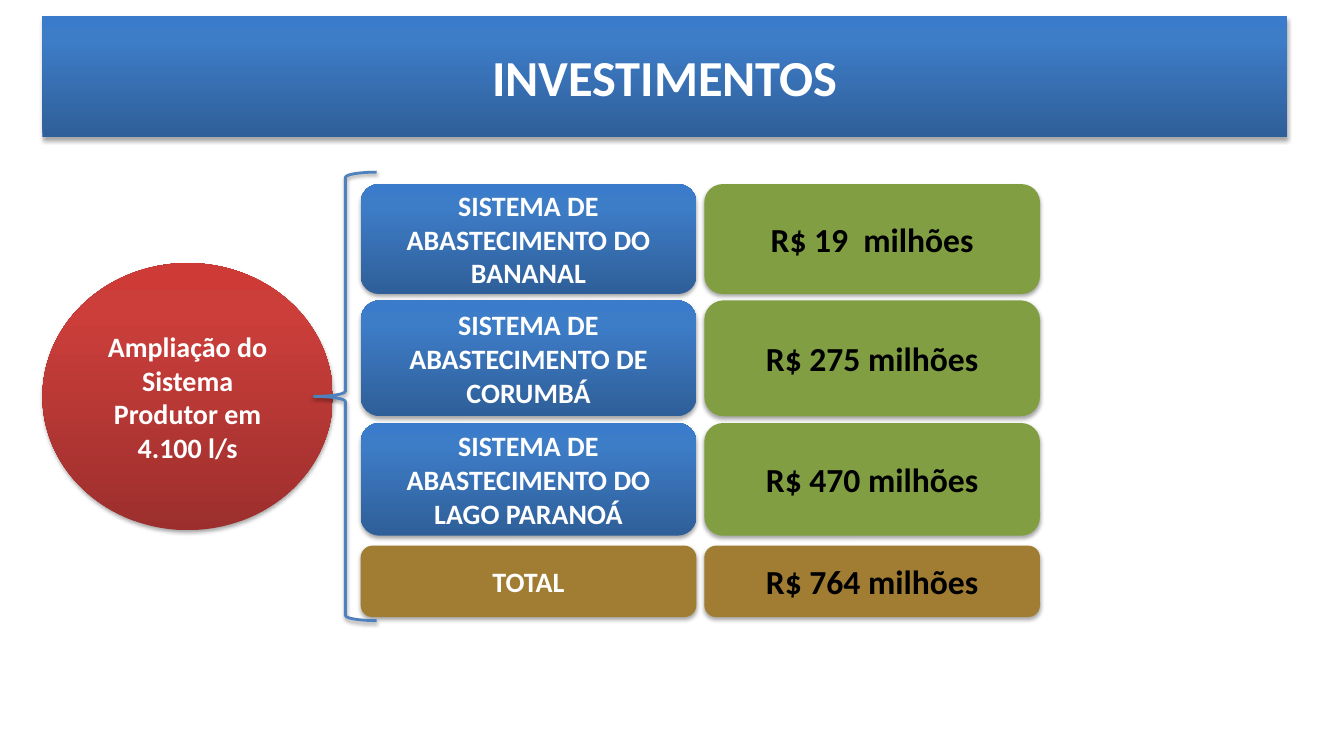
from copy import deepcopy
from lxml import etree
from pptx import Presentation
from pptx.dml.color import RGBColor
from pptx.enum.shapes import MSO_SHAPE
from pptx.enum.text import MSO_ANCHOR, MSO_AUTO_SIZE, PP_ALIGN
from pptx.oxml import parse_xml
from pptx.oxml.ns import qn
from pptx.util import Cm, Pt

ROUND = MSO_SHAPE.ROUNDED_RECTANGLE
OVAL = MSO_SHAPE.OVAL
BRACE = MSO_SHAPE.LEFT_BRACE
MIDDLE = MSO_ANCHOR.MIDDLE
FIXED = MSO_AUTO_SIZE.NONE
CENTER = PP_ALIGN.CENTER

WHITE = RGBColor(0xFF, 0xFF, 0xFF)
BLACK = RGBColor(0x00, 0x00, 0x00)
GREEN = RGBColor(0x81, 0x9E, 0x43)
GOLD = RGBColor(0xA0, 0x7D, 0x32)
LINE = RGBColor(0x4F, 0x81, 0xBD)
BLUES = [RGBColor(0x2F, 0x5F, 0x99), RGBColor(0x3D, 0x7C, 0xC7), RGBColor(0x3A, 0x7C, 0xCB)]
REDS = [RGBColor(0x9C, 0x2F, 0x2D), RGBColor(0xCB, 0x3E, 0x3A), RGBColor(0xCE, 0x3B, 0x37)]
SPACE = "http://schemas.openxmlformats.org/drawingml/2006/main"


def shade(shape, alpha, dist):
    shape.shadow.inherit = False
    glow = etree.SubElement(
        shape._element.spPr.find(qn("a:effectLst")), qn("a:outerShdw"),
        blurRad=str(Pt(3.1)), dist=str(Pt(dist)), dir="5400000", rotWithShape="0")
    ink = etree.SubElement(glow, qn("a:srgbClr"), val="000000")
    etree.SubElement(ink, qn("a:alpha"), val=str(alpha * 1000))


def dress(shape, text, size, color, paint):
    fill = shape.fill
    if isinstance(paint, list):
        fill.gradient()
        fill.gradient_angle = 90
        stops = shape._element.spPr.find(qn("a:gradFill")).find(qn("a:gsLst"))
        stops.append(deepcopy(stops[-1]))
        for stop, tint, place in zip(fill.gradient_stops, paint, (0, 0.8, 1)):
            stop.color.rgb = tint
            stop.position = place
    else:
        fill.solid()
        fill.fore_color.rgb = paint
    shape.line.fill.background()
    shade(shape, 35, 1.8)
    frame = shape.text_frame
    frame.text = text
    frame.word_wrap = True
    frame.auto_size = FIXED
    frame.vertical_anchor = MIDDLE
    par = frame.paragraphs[0]
    par.alignment = CENTER
    font = par.runs[0].font
    font.name = "Calibri"
    font.size = Pt(size)
    font.bold = True
    font.color.rgb = color


deck = Presentation()
deck.slide_width = Cm(33.87)
deck.slide_height = Cm(19.05)
slide = deck.slides.add_slide(deck.slide_layouts[5])
shapes = slide.shapes

title = shapes.title
title.left, title.top, title.width, title.height = Cm(1.07), Cm(0.41), Cm(31.37), Cm(3.05)
title._element.spPr.append(parse_xml(f'<a:prstGeom xmlns:a="{SPACE}" prst="roundRect"><a:avLst/></a:prstGeom>'))
dress(title, "INVESTIMENTOS", 36, WHITE, BLUES)

goal = shapes.add_shape(OVAL, Cm(1.07), Cm(6.63), Cm(7.32), Cm(6.73))
dress(goal, "Ampliação do Sistema Produtor em 4.100 l/s", 20, WHITE, REDS)

rows = [
    (4.64, 2.77, "SISTEMA DE ABASTECIMENTO DO BANANAL", "R$ 19  milhões", BLUES, GREEN),
    (7.57, 2.92, "SISTEMA DE ABASTECIMENTO DE CORUMBÁ", "R$ 275 milhões", BLUES, GREEN),
    (10.66, 2.84, "SISTEMA DE ABASTECIMENTO DO LAGO PARANOÁ", "R$ 470 milhões", BLUES, GREEN),
    (13.75, 1.8, "TOTAL", "R$ 764 milhões", GOLD, GOLD),
]
for top, high, name, cost, left, right in rows:
    label = shapes.add_shape(ROUND, Cm(9.09), Cm(top), Cm(8.46), Cm(high))
    dress(label, name, 20, WHITE, left)
    value = shapes.add_shape(ROUND, Cm(17.75), Cm(top), Cm(8.46), Cm(high))
    dress(value, cost, 24, BLACK, right)

brace = shapes.add_shape(BRACE, Cm(7.92), Cm(4.34), Cm(1.57), Cm(11.3))
brace.fill.background()
brace.line.color.rgb = LINE
brace.line.width = Pt(2)
shade(brace, 38, 1.6)

deck.save("out.pptx")
